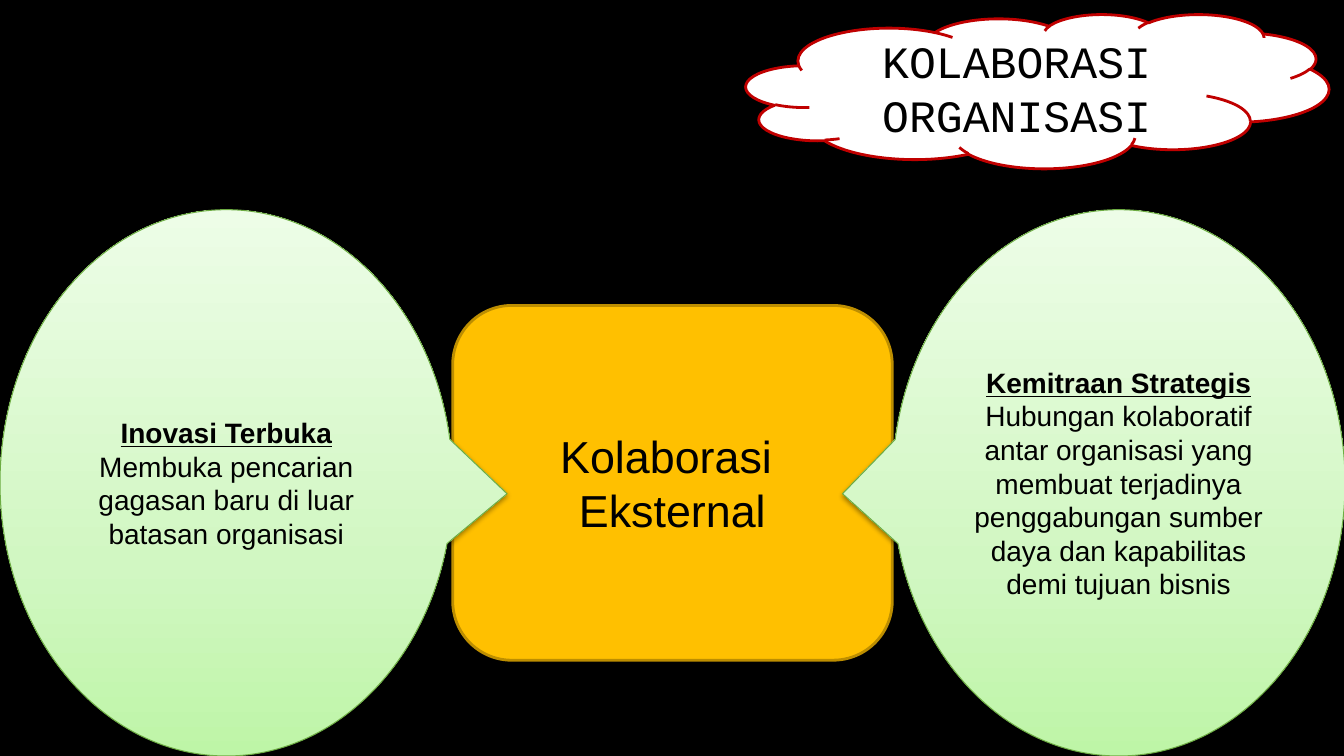
from dataclasses import dataclass

from lxml import etree
from pptx import Presentation
from pptx.dml.color import RGBColor
from pptx.enum.shapes import MSO_SHAPE
from pptx.enum.text import MSO_ANCHOR, PP_ALIGN
from pptx.oxml.ns import qn
from pptx.shapes.autoshape import Shape
from pptx.slide import Slide
from pptx.text.text import TextFrame
from pptx.util import Inches, Pt

CLOUD = MSO_SHAPE.CLOUD
ROUND = MSO_SHAPE.ROUNDED_RECTANGLE
BUBBLE = MSO_SHAPE.OVAL_CALLOUT
MIDDLE = MSO_ANCHOR.MIDDLE
CENTER = PP_ALIGN.CENTER

COLORS = {
    "black": "000000",
    "white": "FFFFFF",
    "red": "C00000",
    "gold": "FFC000",
    "bronze": "BD8E00",
    "leaf": "6DAC43",
}
FADE = ((0, "BEF5A7"), (35, "D1F7C2"), (100, "EDFDE7"))


@dataclass(frozen=True)
class Box:
    kind: MSO_SHAPE
    left: float
    top: float
    width: float
    height: float
    fill: str
    line: str
    lines: tuple[str, ...]
    font: str = "Arial"


@dataclass(frozen=True)
class Callout:
    left: float
    tip: float
    title: str
    body: str


BOXES = (
    Box(CLOUD, 7.4, 0.14, 5.78, 1.53, "white", "red",
        ("KOLABORASI ORGANISASI",), "Courier New"),
    Box(ROUND, 4.49, 3.03, 4.36, 3.52, "gold", "bronze",
        ("Kolaborasi ", "Eksternal")),
)
CALLOUTS = (
    Callout(0, 0.62, "Inovasi Terbuka",
            "Membuka pencarian gagasan baru di luar batasan organisasi"),
    Callout(8.85, -0.61, "Kemitraan Strategis",
            "Hubungan kolaboratif antar organisasi yang membuat terjadinya "
            "penggabungan sumber daya dan kapabilitas demi tujuan bisnis"),
)


def color(name: str) -> RGBColor:
    return RGBColor.from_string(COLORS[name])


def write(frame: TextFrame, text: str, *, size: float, font: str = "Arial",
          strong: bool = False, first: bool = False) -> None:
    para = frame.paragraphs[0] if first else frame.add_paragraph()
    para.alignment = CENTER
    run = para.add_run()
    run.text = text
    run.font.name = font
    run.font.size = Pt(size)
    run.font.bold = strong
    run.font.underline = strong
    run.font.color.rgb = color("black")


def place(slide: Slide, kind: MSO_SHAPE, left: float, top: float,
          width: float, height: float, line: str, weight: float) -> Shape:
    shape = slide.shapes.add_shape(
        kind, Inches(left), Inches(top), Inches(width), Inches(height))
    shape.shadow.inherit = False
    shape.line.color.rgb = color(line)
    shape.line.width = Pt(weight)
    shape.text_frame.word_wrap = True
    shape.text_frame.vertical_anchor = MIDDLE
    return shape


def fade(shape: Shape) -> None:
    shape.fill.gradient()
    shape.fill.gradient_angle = 90
    stops = next(shape.element.iter(qn("a:gsLst")))
    for stop in list(stops):
        stops.remove(stop)
    for spot, tone in FADE:
        stop = etree.SubElement(stops, qn("a:gs"), pos=str(spot * 1000))
        etree.SubElement(stop, qn("a:srgbClr"), val=tone)


def shade(shape: Shape) -> None:
    effects = next(shape.element.iter(qn("a:effectLst")))
    drop = etree.SubElement(
        effects, qn("a:outerShdw"), blurRad=str(Pt(3.1)), dist=str(Pt(1.6)),
        dir=str(90 * 60000), rotWithShape="0")
    tone = etree.SubElement(drop, qn("a:srgbClr"), val=COLORS["black"])
    etree.SubElement(tone, qn("a:alpha"), val="38000")


def draw_box(slide: Slide, box: Box) -> None:
    shape = place(slide, box.kind, box.left, box.top, box.width, box.height,
                  box.line, 2)
    shape.fill.solid()
    shape.fill.fore_color.rgb = color(box.fill)
    for index, text in enumerate(box.lines):
        write(shape.text_frame, text, size=32, font=box.font,
              first=index == 0)


def draw_callout(slide: Slide, item: Callout) -> None:
    shape = place(slide, BUBBLE, item.left, 2.08, 4.49, 5.42, "leaf", 0.75)
    shape.adjustments[0] = item.tip
    shape.adjustments[1] = 0.02
    fade(shape)
    shade(shape)
    write(shape.text_frame, item.title, size=20, strong=True, first=True)
    write(shape.text_frame, item.body, size=20)


def main() -> None:
    deck = Presentation()
    deck.slide_width = Inches(13.33)
    deck.slide_height = Inches(7.5)
    slide = deck.slides.add_slide(deck.slide_layouts[6])
    slide.background.fill.solid()
    slide.background.fill.fore_color.rgb = color("black")
    for box in BOXES:
        draw_box(slide, box)
    for item in CALLOUTS:
        draw_callout(slide, item)
    deck.save("out.pptx")


if __name__ == "__main__":
    main()
